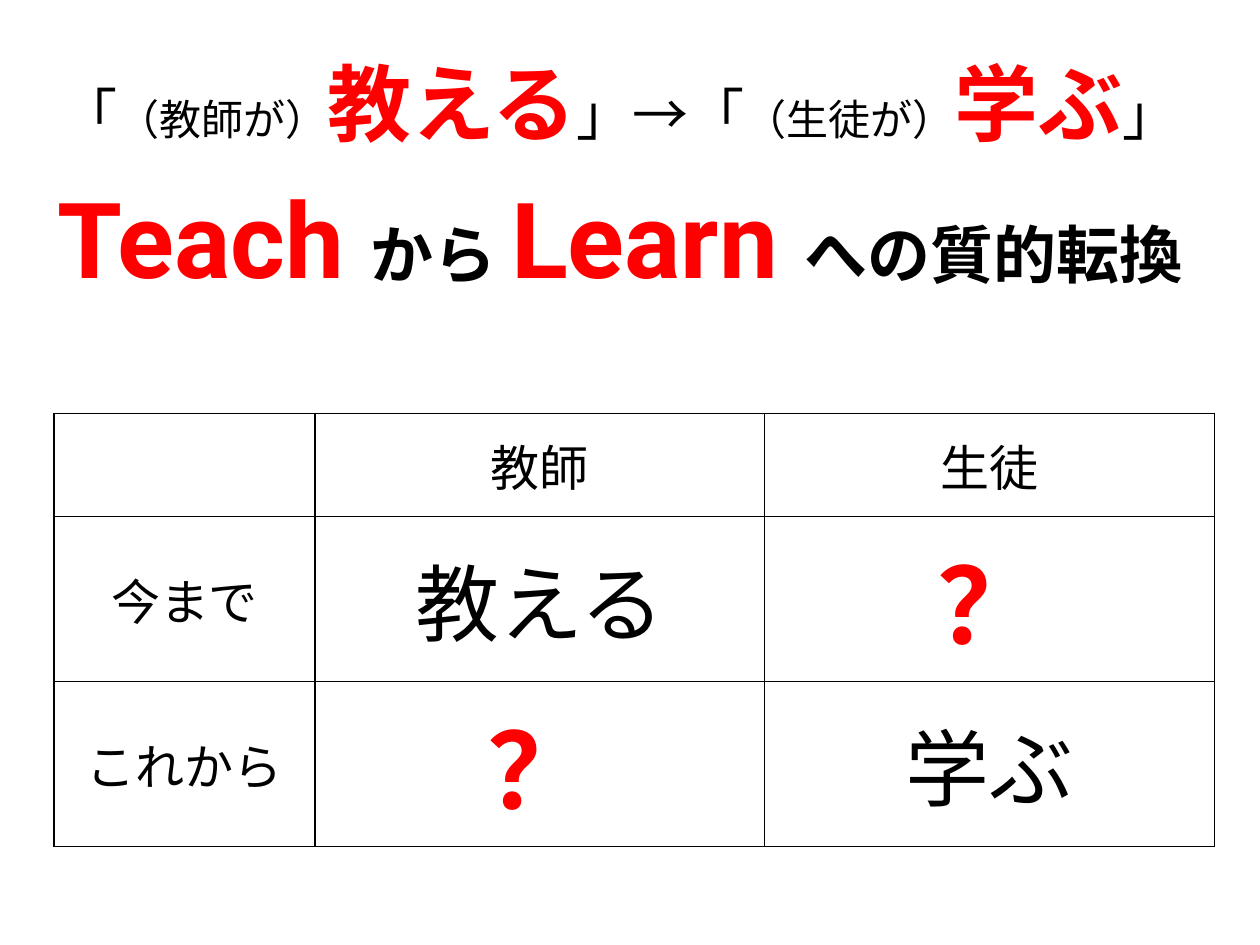
"""Build the slide on moving from teaching to learning."""
from dataclasses import dataclass

from lxml.etree import SubElement
from pptx import Presentation
from pptx.dml.color import RGBColor
from pptx.enum.text import MSO_ANCHOR, MSO_AUTO_SIZE, PP_ALIGN
from pptx.oxml import parse_xml
from pptx.oxml.ns import nsdecls, qn
from pptx.util import Inches, Pt


@dataclass(frozen=True)
class Theme:
    """Colours, type sizes and font of the slide."""
    font: str = "Roboto"
    ink: str = "000000"
    accent: str = "FF0000"
    small: int = 24
    label: int = 28
    bracket: int = 32
    phrase: int = 36
    verb: int = 48
    huge: int = 60


THEME = Theme()


@dataclass(frozen=True)
class Span:
    """A piece of text with its look."""
    text: str
    size: int
    color: str = THEME.ink
    bold: bool = False


def accented(text: str, size: int) -> Span:
    """Return a bold span in the accent colour."""
    return Span(text, size, THEME.accent, True)


HEADLINE = [
    [
        Span("「", THEME.bracket),
        Span("（教師が）", THEME.small),
        accented("教える", THEME.verb),
        Span("」→「", THEME.bracket),
        Span("（生徒が）", THEME.small),
        accented("学ぶ", THEME.verb),
        Span("」", THEME.bracket),
    ],
    [
        accented("Teach ", THEME.huge),
        Span("から ", THEME.phrase, bold=True),
        accented("Learn ", THEME.huge),
        Span("への質的転換", THEME.phrase, bold=True),
    ],
]
QUESTION = accented("？", THEME.huge)
ROWS = [
    [None, Span("教師", THEME.label), Span("生徒", THEME.label)],
    [Span("今まで", THEME.label), Span("教える", THEME.verb), QUESTION],
    [Span("これから", THEME.label), QUESTION, Span("学ぶ", THEME.verb)],
]
COLUMN_WIDTHS = [2.07, 3.57, 3.57]
ROW_HEIGHTS = [0.82, 1.31, 1.31]


def write_spans(paragraph, spans: list[Span]) -> None:
    """Fill a centred paragraph with formatted spans."""
    paragraph.alignment = PP_ALIGN.CENTER
    for span in spans:
        run = paragraph.add_run()
        run.text = span.text
        run.font.name = THEME.font
        run.font.size = Pt(span.size)
        run.font.bold = span.bold
        run.font.color.rgb = RGBColor.from_string(span.color)


def write_headline(body) -> None:
    """Place the body placeholder and write both headline lines."""
    body.left, body.top = Inches(-0.16), Inches(0.36)
    body.width, body.height = Inches(10.16), Inches(2.2)
    frame = body.text_frame
    frame.auto_size = MSO_AUTO_SIZE.NONE
    for index, spans in enumerate(HEADLINE):
        paragraph = frame.add_paragraph() if index else frame.paragraphs[0]
        write_spans(paragraph, spans)
        properties = paragraph._p.get_or_add_pPr()
        properties.set("marL", "0")
        properties.set("indent", "0")
        SubElement(properties, qn("a:buNone"))


def outline_cell(cell) -> None:
    """Draw a one-point border on every side of a cell."""
    properties = cell._tc.get_or_add_tcPr()
    for index, side in enumerate(("lnL", "lnR", "lnT", "lnB")):
        properties.insert(index, parse_xml(
            f'<a:{side} {nsdecls("a")} w="{Pt(1)}"><a:solidFill>'
            f'<a:srgbClr val="{THEME.ink}"/></a:solidFill></a:{side}>'))


def add_comparison(slide) -> None:
    """Add the table comparing teacher and student."""
    table = slide.shapes.add_table(
        len(ROWS), len(COLUMN_WIDTHS), Inches(0.43), Inches(3.28),
        Inches(sum(COLUMN_WIDTHS)), Inches(sum(ROW_HEIGHTS))).table
    table.first_row = table.horz_banding = False
    for column, width in zip(table.columns, COLUMN_WIDTHS):
        column.width = Inches(width)
    for row, height, spans in zip(table.rows, ROW_HEIGHTS, ROWS):
        row.height = Inches(height)
        for cell, span in zip(row.cells, spans):
            cell.fill.background()
            cell.vertical_anchor = MSO_ANCHOR.MIDDLE
            outline_cell(cell)
            if span:
                write_spans(cell.text_frame.paragraphs[0], [span])


def main() -> None:
    """Build and save the presentation."""
    presentation = Presentation()
    presentation.slide_width, presentation.slide_height = Inches(10), Inches(7.5)
    slide = presentation.slides.add_slide(presentation.slide_layouts[1])
    title = slide.shapes.title._element
    title.getparent().remove(title)
    write_headline(slide.placeholders[1])
    add_comparison(slide)
    presentation.save("out.pptx")


if __name__ == "__main__":
    main()
